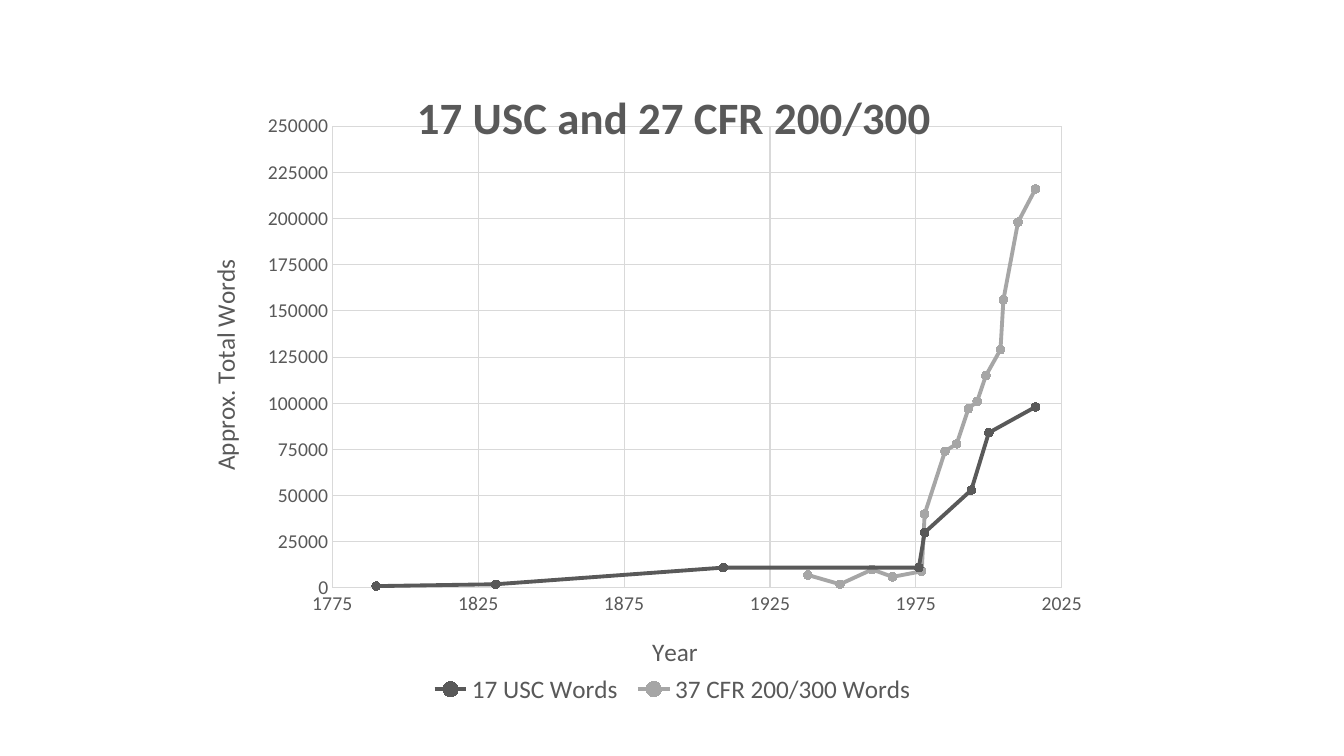
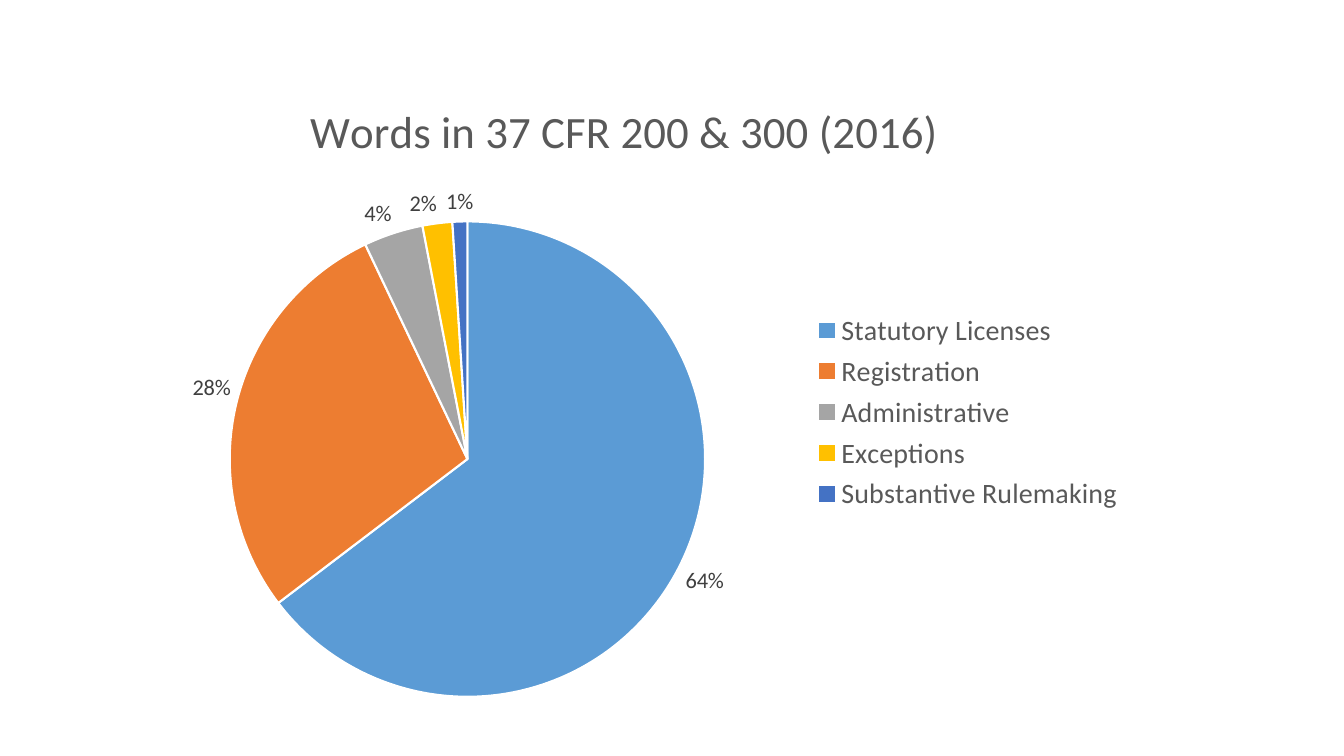
from pptx import Presentation
from pptx.chart.data import CategoryChartData, XyChartData
from pptx.dml.color import RGBColor
from pptx.enum.chart import (XL_CHART_TYPE, XL_LABEL_POSITION, XL_LEGEND_POSITION,
                             XL_MARKER_STYLE, XL_TICK_MARK)
from pptx.oxml import parse_xml
from pptx.oxml.ns import nsdecls, qn
from pptx.util import Cm, Pt

FONT = "Calibri"
GRAY = "595959"
GRID = "D9D9D9"

GROWTH = {
    "title": "17 USC and 27 CFR 200/300",
    "place": (5.1, 1.47, 23.75, 16.92),
    "title_percent": (21.9, 2.9),
    "plot_percent": (13.8, 10.1, 77.4, 68.8),
    "legend_percent": (23.4, 91.2, 53, 5.5),
    "series": [("17 USC Words", GRAY), ("37 CFR 200/300 Words", "A6A6A6")],
    "rows": [
        (1790, 1000, None), (1831, 2000, None), (1909, 11000, None),
        (1938, None, 7000), (1949, None, 2000), (1960, None, 10000),
        (1967, None, 6000), (1977, None, 9000), (1976, 11000, None),
        (1978, 30000, 40000), (1985, None, 74000), (1989, None, 78000),
        (1993, None, 97000), (1994, 53000, None), (1996, None, 101000),
        (1999, None, 115000), (2000, 84000, None), (2004, None, 129000),
        (2005, None, 156000), (2010, None, 198000), (2016, 98000, 216000),
    ],
}
YEAR_AXIS = ("Year", 1775, 2025, 50)
WORDS_AXIS = ("Approx. Total Words", 0, 250000, 25000)

SHARES = {
    "title": "Words in 37 CFR 200 & 300 (2016)",
    "place": (2.36, 1.85, 26.8, 16.08),
    "title_percent": (19.6, 2.9),
    "plot_percent": (12.8, 23.2, 44.7, 74.5),
    "legend_percent": (67.2, 36.6, 30, 33),
    "slices": [
        ("Statutory Licenses", 0.64, "5B9BD5"),
        ("Registration", 0.28, "ED7D31"),
        ("Administrative", 0.04, "A5A5A5"),
        ("Exceptions", 0.02, "FFC000"),
        ("Substantive Rulemaking", 0.01, "4472C4"),
    ],
}


def rgb(value):
    return RGBColor.from_string(value)


def style_font(font, size, color=GRAY, bold=False):
    font.name = FONT
    font.size = Pt(size)
    font.bold = bold
    font.color.rgb = rgb(color)


def set_title(owner, text, size, bold=False):
    frame = owner.text_frame
    frame.text = text
    style_font(frame.paragraphs[0].runs[0].font, size, bold=bold)


def manual_layout(percents, inner=False):
    target = '<c:layoutTarget val="inner"/>' if inner else ""
    modes = '<c:xMode val="edge"/><c:yMode val="edge"/>'
    sizes = "".join(f'<c:{key} val="{percent / 100:.3f}"/>'
                    for key, percent in zip("xywh", percents))
    return parse_xml(f'<c:layout {nsdecls("c")}><c:manualLayout>{target}{modes}{sizes}'
                     '</c:manualLayout></c:layout>')


def drop_layout(parent):
    for old in parent.findall(qn("c:layout")):
        parent.remove(old)


def add_chart_slide(deck, content, kind, data, legend_position, legend_size, bold=False):
    slide = deck.slides.add_slide(deck.slide_layouts[6])
    place = [Cm(length) for length in content["place"]]
    chart = slide.shapes.add_chart(kind, *place, data).chart
    style_font(chart.font, 10, "000000")

    chart.has_title = True
    set_title(chart.chart_title, content["title"], 32, bold)
    heading = chart.chart_title.text_frame._txBody.getparent().getparent()
    drop_layout(heading)
    heading.find(qn("c:tx")).addnext(manual_layout(content["title_percent"]))

    plot_area = chart.plots[0]._element.getparent()
    drop_layout(plot_area)
    plot_area.insert(0, manual_layout(content["plot_percent"], inner=True))

    chart.has_legend = True
    chart.legend.position = legend_position
    chart.legend.include_in_layout = False
    style_font(chart.legend.font, legend_size)
    legend = chart.legend._element
    drop_layout(legend)
    legend.find(qn("c:legendPos")).addnext(manual_layout(content["legend_percent"]))
    return chart


def style_axis(axis, title, low, high, step):
    axis.has_title = True
    set_title(axis.axis_title, title, 18)
    axis.minimum_scale, axis.maximum_scale, axis.major_unit = low, high, step
    axis.major_tick_mark = axis.minor_tick_mark = XL_TICK_MARK.NONE
    axis.format.line.fill.background()
    axis.has_major_gridlines = True
    gridline = axis.major_gridlines.format.line
    gridline.color.rgb = rgb(GRID)
    gridline.width = Pt(0.75)
    style_font(axis.tick_labels.font, 14)


def span_gaps(chart):
    root = chart.plots[0]._element.getparent().getparent()
    for point in list(root.iter(qn("c:pt"))):
        if point.find(qn("c:v")).text in ("None", "", None):
            point.getparent().remove(point)
    blanks = root.find(qn("c:dispBlanksAs"))
    if blanks is None:
        blanks = parse_xml(f'<c:dispBlanksAs {nsdecls("c")}/>')
        root.find(qn("c:plotVisOnly")).addnext(blanks)
    blanks.set("val", "span")


def build_growth(deck):
    data = XyChartData()
    for column, (name, _) in enumerate(GROWTH["series"], 1):
        series = data.add_series(name)
        for row in GROWTH["rows"]:
            series.add_data_point(row[0], row[column])
    chart = add_chart_slide(deck, GROWTH, XL_CHART_TYPE.XY_SCATTER_LINES, data,
                            XL_LEGEND_POSITION.BOTTOM, 18, bold=True)
    span_gaps(chart)
    chart.plots[0].vary_by_categories = False
    style_axis(chart.category_axis, *YEAR_AXIS)
    style_axis(chart.value_axis, *WORDS_AXIS)
    for series, (_, color) in zip(chart.plots[0].series, GROWTH["series"]):
        series.smooth = False
        series.format.line.color.rgb = rgb(color)
        series.format.line.width = Pt(2.75)
        marker = series.marker
        marker.style = XL_MARKER_STYLE.CIRCLE
        marker.size = 6
        marker.format.fill.solid()
        marker.format.fill.fore_color.rgb = rgb(color)
        marker.format.line.color.rgb = rgb(color)


def build_shares(deck):
    names, shares, colors = zip(*SHARES["slices"])
    data = CategoryChartData(number_format="0%")
    data.categories = names
    data.add_series("Series 1", shares)
    chart = add_chart_slide(deck, SHARES, XL_CHART_TYPE.PIE, data,
                            XL_LEGEND_POSITION.RIGHT, 20)
    pie = chart.plots[0]
    pie.vary_by_categories = True
    for index, color in enumerate(colors):
        piece = pie.series[0].points[index].format
        piece.fill.solid()
        piece.fill.fore_color.rgb = rgb(color)
        piece.line.color.rgb = rgb("FFFFFF")
        piece.line.width = Pt(1.5)
    labels = pie.series[0].data_labels
    labels.show_value = True
    labels.number_format = "0%"
    labels.number_format_is_linked = False
    labels.position = XL_LABEL_POSITION.OUTSIDE_END
    style_font(labels.font, 16, "404040")


def main():
    deck = Presentation()
    deck.slide_width, deck.slide_height = Cm(33.87), Cm(19.05)
    build_growth(deck)
    build_shares(deck)
    deck.save("out.pptx")


if __name__ == "__main__":
    main()
